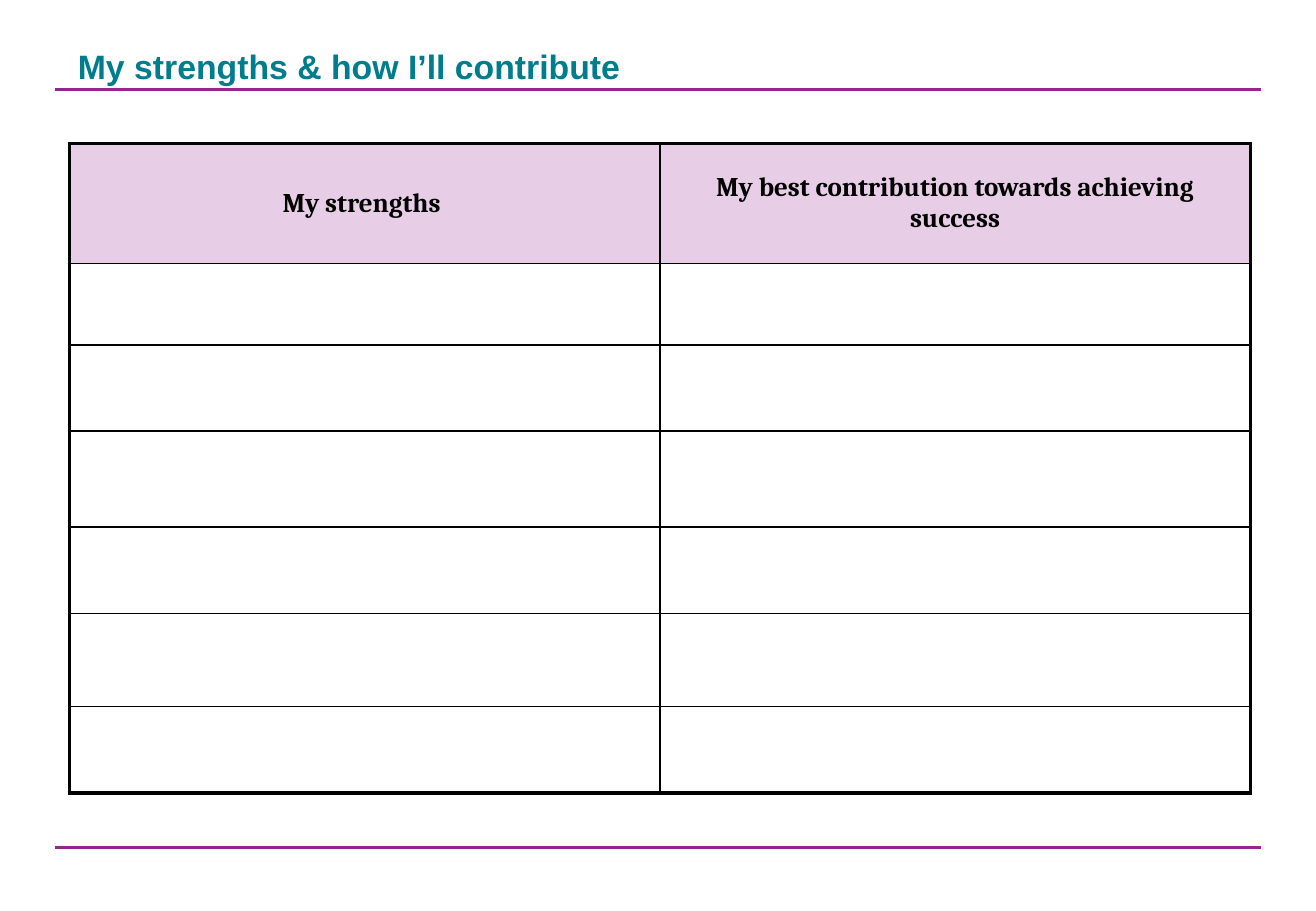
from lxml import etree
from pptx import Presentation
from pptx.dml.color import RGBColor
from pptx.enum.shapes import MSO_CONNECTOR
from pptx.enum.text import MSO_ANCHOR, PP_ALIGN
from pptx.oxml.ns import qn
from pptx.util import Inches, Pt

TEAL = RGBColor(0x00, 0x7D, 0x8C)
PURPLE = RGBColor(0x92, 0x27, 0x8F)
LILAC = RGBColor(0xE8, 0xCD, 0xE7)
BLACK = RGBColor(0x00, 0x00, 0x00)

HEADINGS = ["My strengths ", "My best contribution towards achieving success"]
ROW_HEIGHTS = [0.99, 0.67, 0.71, 0.79, 0.71, 0.77, 0.71]
THIN, THICK = 1, 2.25


def add_rule(slide, left, top, width):
    rule = slide.shapes.add_connector(
        MSO_CONNECTOR.STRAIGHT, Inches(left), Inches(top), Inches(left + width), Inches(top))
    rule.line.color.rgb = PURPLE
    rule.line.width = Pt(1.75)
    etree.SubElement(rule._element.spPr, qn("a:effectLst"))


def set_title(slide, left, top, width, height):
    title = slide.shapes.title
    title.left, title.top = Inches(left), Inches(top)
    title.width, title.height = Inches(width), Inches(height)
    frame = title.text_frame
    frame.text = "My strengths & how I’ll contribute"
    frame.vertical_anchor = MSO_ANCHOR.TOP
    frame.margin_top = Inches(0.08)
    heading = frame.paragraphs[0]
    heading.alignment = PP_ALIGN.LEFT
    heading.font.name = "Arial"
    heading.font.size = Pt(20)
    heading.font.bold = True
    heading.font.color.rgb = TEAL


def set_borders(cell, widths):
    properties = cell._tc.get_or_add_tcPr()
    for side, width in widths.items():
        border = etree.SubElement(properties, qn(f"a:ln{side}"), w=str(Pt(width)))
        fill = etree.SubElement(border, qn("a:solidFill"))
        etree.SubElement(fill, qn("a:srgbClr"), val=str(BLACK))


def format_heading(cell, text):
    cell.text = text
    cell.vertical_anchor = MSO_ANCHOR.MIDDLE
    cell.fill.solid()
    cell.fill.fore_color.rgb = LILAC
    heading = cell.text_frame.paragraphs[0]
    heading.alignment = PP_ALIGN.CENTER
    heading.font.name = "Cambria"
    heading.font.size = Pt(16)
    heading.font.bold = True
    heading.font.color.rgb = BLACK


def add_strengths_table(slide, left, top, width):
    last_row, last_col = len(ROW_HEIGHTS) - 1, len(HEADINGS) - 1
    table = slide.shapes.add_table(
        last_row + 1, last_col + 1, Inches(left), Inches(top),
        Inches(width), Inches(sum(ROW_HEIGHTS))).table
    table.first_row = table.horz_banding = False
    for row, height in zip(table.rows, ROW_HEIGHTS):
        row.height = Inches(height)

    # Thick outer frame, thin inner grid
    for r in range(last_row + 1):
        for c, heading in enumerate(HEADINGS):
            cell = table.cell(r, c)
            set_borders(cell, {
                "L": THICK if c == 0 else THIN,
                "R": THICK if c == last_col else THIN,
                "T": THICK if r == 0 else THIN,
                "B": THICK if r == last_row else THIN,
            })
            if r == 0:
                format_heading(cell, heading)
            else:
                cell.fill.background()


def main():
    prs = Presentation()
    prs.slide_width, prs.slide_height = Inches(10.83), Inches(7.5)
    slide = prs.slides.add_slide(prs.slide_layouts[5])

    # Rules above and below the content
    for top in (0.74, 6.98):
        add_rule(slide, 0.45, top, 9.93)

    # Title and worksheet
    set_title(slide, 0.54, 0.3, 9.75, 1.25)
    add_strengths_table(slide, 0.57, 1.18, 9.72)

    prs.save("out.pptx")


if __name__ == "__main__":
    main()
